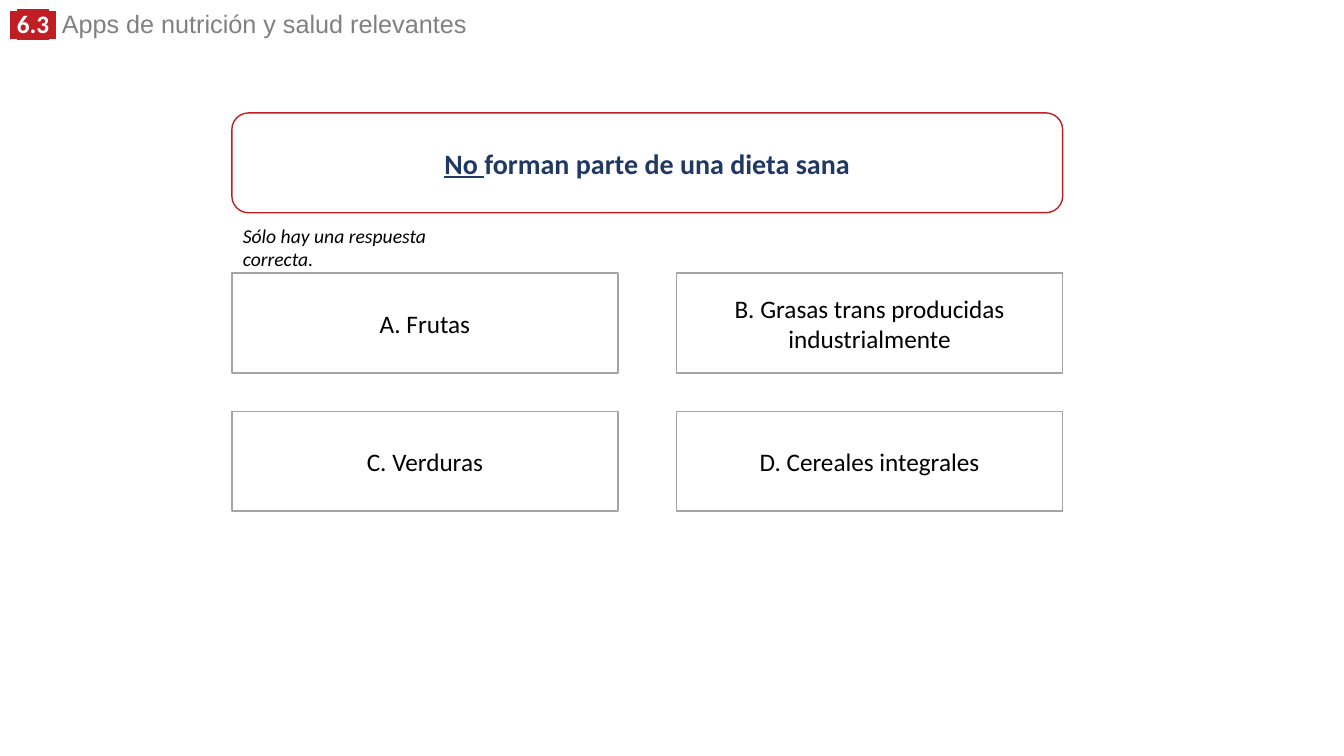
import pptx
import pptx.util
import pptx.dml.color
import pptx.enum.shapes
import pptx.enum.text
from lxml import etree

# Content
TITLE = [(" ", "tag_space"), ("6.3", "tag"), (" ", "tag_space"),
         (" Apps de nutrición y salud relevantes", "title")]
QUESTION = [("No ", "negation"), ("forman parte de una dieta sana", "question")]
NOTE = [("Sólo hay una respuesta correcta.", "note")]
ANSWERS = ["A. Frutas", "B. Grasas trans producidas industrialmente",
           "C. Verduras", "D. Cereales integrales"]

# Formats
COLORS = {"red": "C01E24", "navy": "203864", "gray": "808080",
          "border": "A5A5A5", "white": "FFFFFF", "black": "000000"}
FORMATS = {
    "tag_space": dict(name="Arial", size=18, bold=True, color="white", highlight="red"),
    "tag": dict(name="Calibri", size=18, bold=True, color="white", highlight="red"),
    "title": dict(name="Arial", size=18, bold=False, color="gray"),
    "negation": dict(name="Calibri", size=20, bold=True, underline=True, color="navy"),
    "question": dict(name="Calibri", size=20, bold=True, color="navy"),
    "note": dict(name="Calibri", size=14, italic=True, color="black"),
    "answer": dict(name="Calibri", size=18, color="black"),
}

# Grid of answers, in inches
LEFT, TOP = 2.3, 2.71
BOX_W, BOX_H = 3.83, 0.99
COL_STEP, ROW_STEP = 4.41, 1.37
COLS = 2

SHAPE = pptx.enum.shapes.MSO_SHAPE
Inches = pptx.util.Inches


def rgb(name):
    return pptx.dml.color.RGBColor.from_string(COLORS[name])


def add_runs(p, runs):
    for text, style in runs:
        r = p.add_run()
        r.text = text
        for key, value in FORMATS[style].items():
            if key == "color":
                r.font.color.rgb = rgb(value)
            elif key == "highlight":
                fill = r.font.fill._xPr.find(pptx.oxml.ns.qn("a:solidFill"))
                mark = etree.Element(pptx.oxml.ns.qn("a:highlight"))
                etree.SubElement(mark, pptx.oxml.ns.qn("a:srgbClr"), val=COLORS[value])
                fill.addnext(mark)
            else:
                setattr(r.font, key, pptx.util.Pt(value) if key == "size" else value)


def add_text(s, box, runs):
    sp = s.shapes.add_textbox(*map(Inches, box))
    sp.text_frame.word_wrap = True
    p = sp.text_frame.paragraphs[0]
    add_runs(p, runs)
    return p


def add_box(s, kind, box, border, runs):
    sp = s.shapes.add_shape(kind, *map(Inches, box))
    sp.shadow.inherit = False
    sp.fill.solid()
    sp.fill.fore_color.rgb = rgb("white")
    sp.line.color.rgb = rgb(border)
    sp.line.width = pptx.util.Pt(1)
    tf = sp.text_frame
    tf.word_wrap = True
    tf.vertical_anchor = pptx.enum.text.MSO_ANCHOR.MIDDLE
    p = tf.paragraphs[0]
    p.alignment = pptx.enum.text.PP_ALIGN.CENTER
    add_runs(p, runs)


prs = pptx.Presentation()
prs.slide_width, prs.slide_height = Inches(13.33), Inches(7.5)
s = prs.slides.add_slide(prs.slide_layouts[6])

# Section heading
add_text(s, (0, 0.09, 9.52, 0.35), TITLE).line_spacing = 0.8

# Question, as wide as the answer grid
add_box(s, SHAPE.ROUNDED_RECTANGLE, (LEFT, 1.12, COL_STEP + BOX_W, BOX_H), "red", QUESTION)

# Answers
for i, answer in enumerate(ANSWERS):
    row, col = divmod(i, COLS)
    box = (LEFT + col * COL_STEP, TOP + row * ROW_STEP, BOX_W, BOX_H)
    add_box(s, SHAPE.RECTANGLE, box, "border", [(answer, "answer")])

# Hint under the question
add_text(s, (2.31, 2.17, 2.36, 0.34), NOTE)

prs.save("out.pptx")
